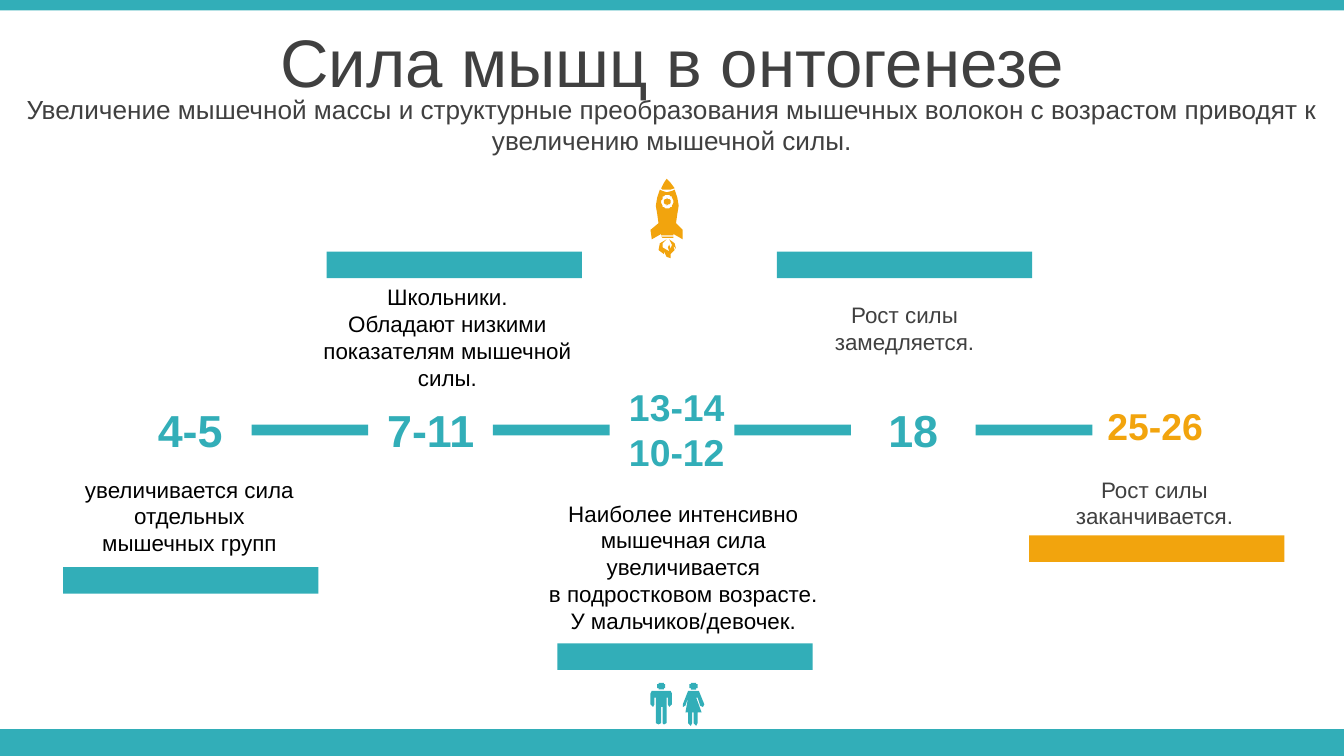
"""Builds a slide with an age timeline of muscle strength."""
import math

import pptx
import pptx.dml.color
import pptx.enum.shapes
import pptx.enum.text
import pptx.util

Pt = pptx.util.Pt
COLORS = {"teal": "32AEB8", "orange": "F2A40D", "gray": "404040", "black": "000000"}
FONT = "Arial"
ICON_UNIT = 0.72

MILESTONES = [
    (65.5, 212.4, ["4-5"], 24, "teal"),
    (194.4, 212.4, ["7-11"], 24, "teal"),
    (326.2, 202.3, ["13-14", "10-12"], 20, "teal"),
    (452.9, 212.4, ["18"], 24, "teal"),
    (582.5, 212.4, ["25-26"], 20, "orange"),
]
NOTES = [
    (33.1, 251.3, 136.8, ["увеличивается сила", "отдельных", "мышечных групп"], "black"),
    (163.4, 148.3, 152.6, ["Школьники.", "Обладают низкими",
                           "показателям мышечной силы."], "black"),
    (281.5, 264.2, 169.2, ["Наиболее интенсивно", "мышечная сила", "увеличивается",
                           "в подростковом возрасте.", "У мальчиков/девочек."], "black"),
    (550.1, 251.3, 136.8, ["Рост силы заканчивается."], "gray"),
    (416.2, 157.7, 136.8, ["Рост силы замедляется."], "gray"),
]
BARS = [
    (33.8, 303.8, "teal"),
    (175, 134.8, "teal"),
    (298.6, 344.7, "teal"),
    (551.3, 286.8, "orange"),
    (416.2, 134.8, "teal"),
]


def color(name):
    """Return the named colour."""
    return pptx.dml.color.RGBColor.from_string(COLORS[name])


def paint(shape, fill):
    """Give a shape a flat fill without line or shadow."""
    shape.shadow.inherit = False
    shape.fill.solid()
    shape.fill.fore_color.rgb = color(fill)
    shape.line.fill.background()


def add_bar(page, left, top, width, height, fill):
    """Add a plain rectangle."""
    kind = pptx.enum.shapes.MSO_SHAPE.RECTANGLE
    paint(page.shapes.add_shape(kind, Pt(left), Pt(top), Pt(width), Pt(height)), fill)


def write(box, lines, size, ink, bold=False, middle=False):
    """Fill a box with centred paragraphs."""
    frame = box.text_frame
    frame.word_wrap = True
    frame.auto_size = pptx.enum.text.MSO_AUTO_SIZE.NONE
    anchor = pptx.enum.text.MSO_ANCHOR
    frame.vertical_anchor = anchor.MIDDLE if middle else anchor.TOP
    frame.text = "\n".join(lines)
    for paragraph in frame.paragraphs:
        paragraph.alignment = pptx.enum.text.PP_ALIGN.CENTER
        paragraph.font.name = FONT
        paragraph.font.size = Pt(size)
        paragraph.font.bold = bold
        paragraph.font.color.rgb = color(ink)


def add_text(page, left, top, width, height, lines, size, ink, **style):
    """Add a text box."""
    box = page.shapes.add_textbox(Pt(left), Pt(top), Pt(width), Pt(height))
    write(box, lines, size, ink, **style)


def add_title(page, text):
    """Place and format the title placeholder."""
    title = page.shapes.title
    title.left, title.top, title.width, title.height = Pt(0), Pt(10), Pt(720), Pt(45.4)
    write(title, [text], 36, "gray", middle=True)


def ellipse(x, y, radius_x, radius_y):
    """Return the points of an ellipse."""
    angles = [math.tau * step / 24 for step in range(24)]
    return [(x + radius_x * math.cos(a), y + radius_y * math.sin(a)) for a in angles]


def add_icon(page, left, top, contours, fill):
    """Draw closed contours as one shape."""
    builder = page.shapes.build_freeform(*contours[0][0], scale=Pt(ICON_UNIT))
    for index, points in enumerate(contours):
        if index:
            builder.move_to(*points[0])
        builder.add_line_segments(points[1:], close=True)
    paint(builder.convert_to_shape(Pt(left), Pt(top)), fill)


def add_rocket(page):
    """Draw the rocket."""
    nose = [(12, 0), (15, 3), (18, 7), (15, 8), (12, 8.3), (9, 8), (8, 7), (9.5, 3)]
    body = [(7, 8), (9, 9), (12.5, 9.5), (16, 9), (18, 8), (20.3, 14), (20.7, 20),
            (20.3, 26), (19, 33), (24.5, 38), (24, 45), (17, 41), (17, 42), (8, 42),
            (8, 41), (1, 45), (0, 38), (6, 33), (4.7, 26), (4.3, 20), (4.7, 14)]
    band = [(8, 43), (17, 43), (17, 44), (9, 44)]
    flame = [(12, 45), (9, 48), (9, 51), (14, 54), (13, 51), (14, 49), (15, 52),
             (16, 49), (14, 45), (18, 48), (19, 52), (17, 50), (18, 53), (15, 56),
             (15, 59), (12, 58), (10, 54), (10, 56), (6, 53), (7, 48)]
    rings = [ellipse(12.5, 17, 4.5, 5), ellipse(12.5, 17, 2.5, 2.5)]
    add_icon(page, 348.5, 95.8, [nose, body, *rings, band, flame], "orange")


def add_people(page):
    """Draw the boy and the girl."""
    head = ellipse(8, 2.5, 3.2, 2.5)
    boy = [(3, 6), (13, 6), (15, 6.5), (16, 8), (16, 16), (14.5, 17.5), (13, 16),
           (13, 11), (12, 11), (12, 30), (10.5, 31), (9, 30), (9, 18), (8, 18),
           (8, 30), (6, 31), (4, 30), (4, 11), (3, 11), (3, 16), (1.5, 17.5),
           (0, 16), (0, 8), (1, 6.5)]
    girl = [(5, 6), (10, 6), (12, 6.5), (15.5, 16), (15, 17.5), (13, 17), (11, 11),
            (10.5, 11), (14, 22), (11, 22), (11, 30), (9.5, 32), (8, 30), (8, 22),
            (7, 22), (7, 30), (5.5, 32), (4, 30), (4, 22), (1.5, 22), (4.5, 11),
            (4, 11), (2, 17), (0.5, 17.5), (0, 16), (3.5, 6.5)]
    for left, body in ((348.5, boy), (365.8, girl)):
        add_icon(page, left, 365.8, [body, head], "teal")


def main():
    """Build and save the slide."""
    deck = pptx.Presentation()
    deck.slide_width, deck.slide_height = Pt(720), Pt(405)
    page = deck.slides.add_slide(deck.slide_layouts[5])
    add_bar(page, 0, 390.6, 720, 14.4, "teal")
    add_bar(page, 0, 0, 720, 5.6, "teal")
    add_title(page, "Сила мышц в онтогенезе")
    add_text(page, 0, 55.4, 720, 22.7,
             ["Увеличение мышечной массы и структурные преобразования мышечных "
              "волокон с возрастом приводят к увеличению мышечной силы."],
             14, "gray", middle=True)
    for left, top, lines, size, ink in MILESTONES:
        height = 7.2 + 1.2 * size * len(lines)
        add_text(page, left, top, 72.7, height, lines, size, ink, bold=True)
    for index in range(len(MILESTONES) - 1):
        add_bar(page, 134.8 + 129.3 * index, 227.5, 62.5, 5.8, "teal")
    for left, top, width, lines, ink in NOTES:
        height = 7.2 + 14.4 * max(2, len(lines))
        add_text(page, left, top, width, height, lines, 12, ink)
    for left, top, fill in BARS:
        add_bar(page, left, top, 136.8, 14.2, fill)
    add_people(page)
    add_rocket(page)
    deck.save("out.pptx")


if __name__ == "__main__":
    main()
